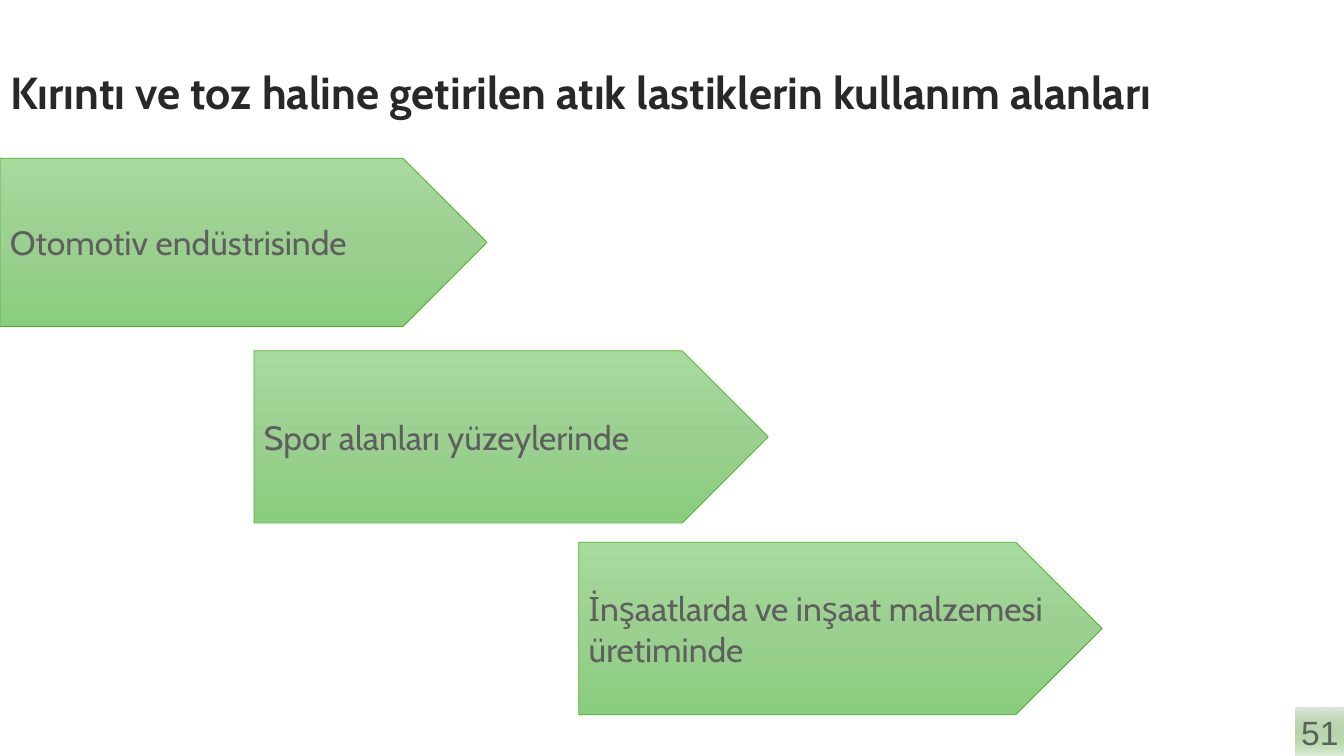
"""Build the slide on uses of crumbed and powdered waste tyres."""
from lxml import etree
from pptx import Presentation, util as u
from pptx.dml.color import RGBColor
from pptx.enum import shapes, text
from pptx.oxml import ns

WIDTH, HEIGHT = 13.33, 7.5
TITLE = "Kırıntı ve toz haline getirilen atık lastiklerin kullanım alanları"
NUMBER = "51"
USES = [
    (["Otomotiv endüstrisinde"], (0, 1.57, 4.83, 1.67)),
    (["Spor alanları yüzeylerinde"], (2.52, 3.48, 5.1, 1.71)),
    (["İnşaatlarda ve inşaat malzemesi", "üretiminde"], (5.74, 5.38, 5.19, 1.71)),
]
ARROW_STOPS = [(0, "A7DB9E", 100), (50, "9BD091", 100), (100, "89CE7D", 100)]
NUMBER_STOPS = [(0, "DFE7DF", 100), (100, "238A00", 15)]
TITLE_COLOR, TEXT_COLOR, LINE_COLOR = "282828", "5F5F5F", "4BB01E"
NUMBER_SIDE = 0.48


def color(value):
    return RGBColor.from_string(value)


def place(shape, area):
    shape.left, shape.top, shape.width, shape.height = map(u.Inches, area)


def write(shape, lines, size, font, ink, align, bold=False):
    frame = shape.text_frame
    frame.text = "\n".join(lines)
    frame.vertical_anchor = text.MSO_ANCHOR.MIDDLE
    frame.auto_size = text.MSO_AUTO_SIZE.NONE
    frame.word_wrap = True
    for para in frame.paragraphs:
        para.alignment = align
        para.font.size = u.Pt(size)
        para.font.name = font
        para.font.bold = bold
        para.font.color.rgb = color(ink)


def fill_down(shape, stops):
    shape.fill.gradient()
    gradient = shape._element.spPr.find(ns.qn("a:gradFill"))
    for child in list(gradient):
        gradient.remove(child)
    stop_list = etree.SubElement(gradient, ns.qn("a:gsLst"))
    for position, value, opacity in stops:
        stop = etree.SubElement(stop_list, ns.qn("a:gs"), pos=str(position * 1000))
        tint = etree.SubElement(stop, ns.qn("a:srgbClr"), val=value)
        if opacity < 100:
            etree.SubElement(tint, ns.qn("a:alpha"), val=str(opacity * 1000))
    etree.SubElement(gradient, ns.qn("a:lin"), ang="5400000", scaled="0")


def add_filled(page, kind, area, stops):
    shape = page.shapes.add_shape(kind, *map(u.Inches, area))
    shape.shadow.inherit = False
    fill_down(shape, stops)
    return shape


def main():
    deck = Presentation()
    deck.slide_width, deck.slide_height = u.Inches(WIDTH), u.Inches(HEIGHT)
    page = deck.slides.add_slide(deck.slide_layouts[5])

    title = page.shapes.title
    place(title, (0, 0.52, 12, 0.78))
    write(title, [TITLE], 32, "Cabin", TITLE_COLOR, text.PP_ALIGN.JUSTIFY, True)

    corner = (WIDTH - NUMBER_SIDE, HEIGHT - NUMBER_SIDE, NUMBER_SIDE, NUMBER_SIDE)
    number = add_filled(page, shapes.MSO_SHAPE.RECTANGLE, corner, NUMBER_STOPS)
    number.line.fill.background()
    write(number, [NUMBER], 24, "Arial", TEXT_COLOR, text.PP_ALIGN.CENTER)
    number.text_frame.margin_left = number.text_frame.margin_right = 0

    for lines, area in USES:
        arrow = add_filled(page, shapes.MSO_SHAPE.PENTAGON, area, ARROW_STOPS)
        arrow.line.color.rgb = color(LINE_COLOR)
        arrow.line.width = u.Pt(0.5)
        write(arrow, lines, 24, "Cabin", TEXT_COLOR, text.PP_ALIGN.JUSTIFY)
        arrow.text_frame.margin_right = 0

    deck.save("out.pptx")


if __name__ == "__main__":
    main()
